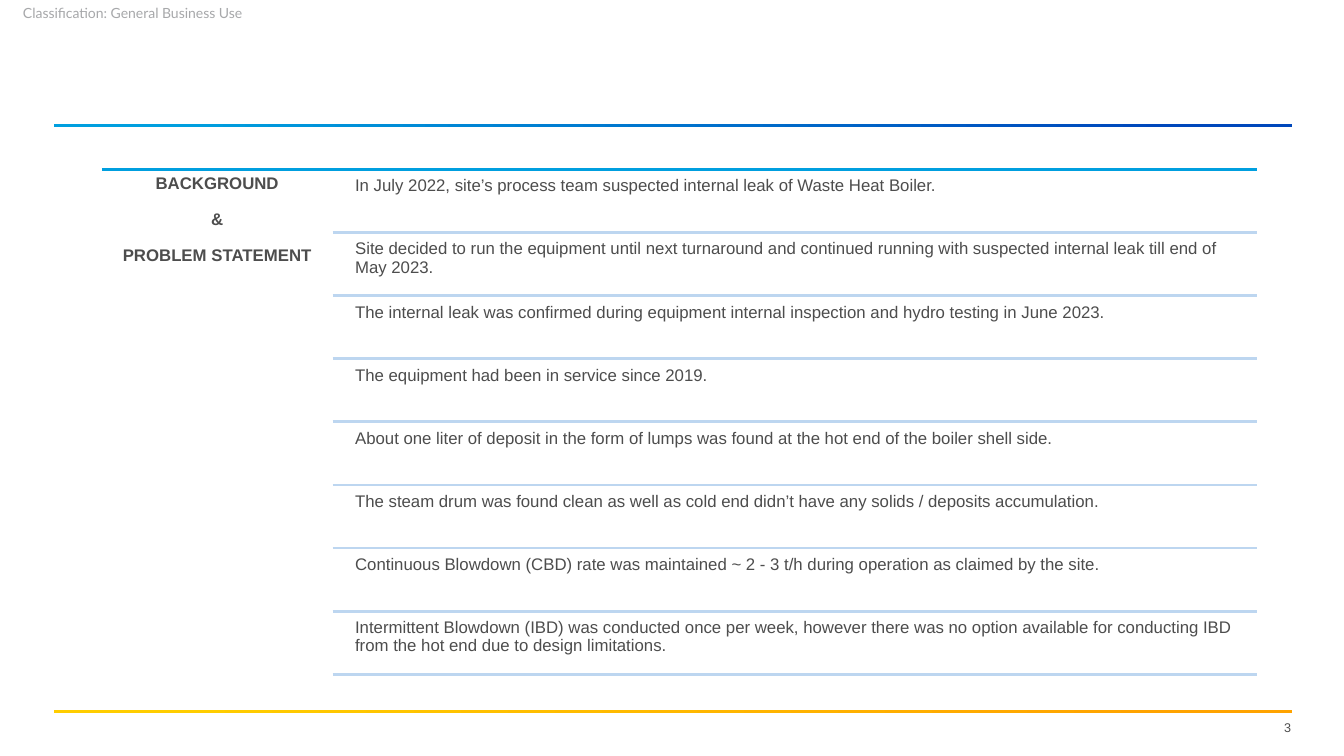
from lxml.etree import SubElement
from pptx import Presentation
from pptx.dml.color import RGBColor
from pptx.enum.shapes import MSO_CONNECTOR, MSO_SHAPE
from pptx.enum.text import MSO_ANCHOR, PP_ALIGN
from pptx.oxml.ns import qn
from pptx.util import Cm, Pt

COLORS = {
    "text": "4D4D4D",
    "gray": "A7A8AA",
    "cyan": "009FDF",
    "blue": "0047BB",
    "pale": "BDD6F0",
    "yellow": "FFCD00",
    "orange": "FFA300",
}
LABEL = ["BACKGROUND", "&", "PROBLEM STATEMENT"]
FACTS = [
    "In July 2022, site’s process team suspected internal leak of Waste Heat Boiler.",
    "Site decided to run the equipment until next turnaround and continued running "
    "with suspected internal leak till end of May 2023.",
    "The internal leak was confirmed during equipment internal inspection and hydro "
    "testing in June 2023.",
    "The equipment had been in service since 2019.",
    "About one liter of deposit in the form of lumps was found at the hot end of the "
    "boiler shell side.",
    "The steam drum was found clean as well as cold end didn’t have any solids / "
    "deposits accumulation.",
    "Continuous Blowdown (CBD) rate was maintained ~ 2 - 3 t/h during operation as "
    "claimed by the site.",
    "Intermittent Blowdown (IBD) was conducted once per week, however there was no "
    "option available for conducting IBD from the hot end due to design limitations.",
]
LEFT, SPLIT, RIGHT = 2.57, 8.38, 31.67
TOP, STEP = 4.27, 1.59


def color(name):
    return RGBColor.from_string(COLORS[name])


def add_text(slide, lines, left, top, width, height, size=12, name="Arial",
             tint="text", bold=False, align=PP_ALIGN.LEFT, space=0.9, gap=0,
             inset=0.13, anchor=MSO_ANCHOR.TOP):
    """Add a text box with one paragraph per line, gap points apart."""
    box = slide.shapes.add_textbox(Cm(left), Cm(top), Cm(width), Cm(height))
    frame = box.text_frame
    frame.word_wrap = True
    frame.vertical_anchor = anchor
    frame.margin_left = frame.margin_right = Cm(inset)
    frame.margin_top = frame.margin_bottom = Cm(inset)
    frame.text = "\n".join(lines)
    for i, para in enumerate(frame.paragraphs):
        para.alignment = align
        para.line_spacing = space
        if i:
            para.space_before = Pt(gap)
        font = para.font
        font.size, font.name, font.bold = Pt(size), name, bold
        font.color.rgb = color(tint)


def add_rule(slide, left, top, tint):
    """Draw a level line from left to the right edge of the list."""
    line = slide.shapes.add_connector(
        MSO_CONNECTOR.STRAIGHT, Cm(left), Cm(top), Cm(RIGHT), Cm(top))
    line.line.width = Pt(2)
    line.line.color.rgb = color(tint)
    SubElement(line._element.spPr, qn("a:effectLst"))


def add_band(slide, top, start, end):
    """Draw a thin bar that fades from start to end."""
    bar = slide.shapes.add_shape(
        MSO_SHAPE.RECTANGLE, Cm(1.36), Cm(top), Cm(31.2), Cm(0.08))
    bar.shadow.inherit = False
    bar.line.fill.background()
    bar.fill.gradient()
    bar.fill.gradient_angle = 0
    for stop, tint, place in zip(bar.fill.gradient_stops, (start, end), (0.1, 0.9)):
        stop.color.rgb = color(tint)
        stop.position = place


def add_frame(slide):
    """Add the bands, the page number and the classification."""
    add_text(slide, ["3"], 30.35, 18.08, 2.19, 0.48, size=9, space=1,
             align=PP_ALIGN.RIGHT, inset=0, anchor=MSO_ANCHOR.MIDDLE)
    add_band(slide, 17.88, "yellow", "orange")
    add_band(slide, 3.13, "cyan", "blue")
    add_text(slide, ["Classification: General Business Use"], 0.58, 0, 6.2, 0.66,
             size=10, name="Lato", tint="gray", space=1, inset=0,
             anchor=MSO_ANCHOR.MIDDLE)


def add_list(slide):
    """Add the label at the left and the ruled facts beside it."""
    add_rule(slide, LEFT, TOP, "cyan")
    add_text(slide, LABEL, LEFT, TOP, SPLIT - LEFT, STEP * len(FACTS),
             bold=True, align=PP_ALIGN.CENTER, gap=13)
    for i, fact in enumerate(FACTS):
        top = TOP + i * STEP
        add_text(slide, [fact], 8.82, top + 0.07, RIGHT - 8.82, 1.52)
        add_rule(slide, SPLIT, top + STEP, "pale")


def main():
    prs = Presentation()
    prs.slide_width, prs.slide_height = Cm(33.87), Cm(19.05)
    slide = prs.slides.add_slide(prs.slide_layouts[6])
    add_frame(slide)
    add_list(slide)
    prs.save("out.pptx")


if __name__ == "__main__":
    main()
